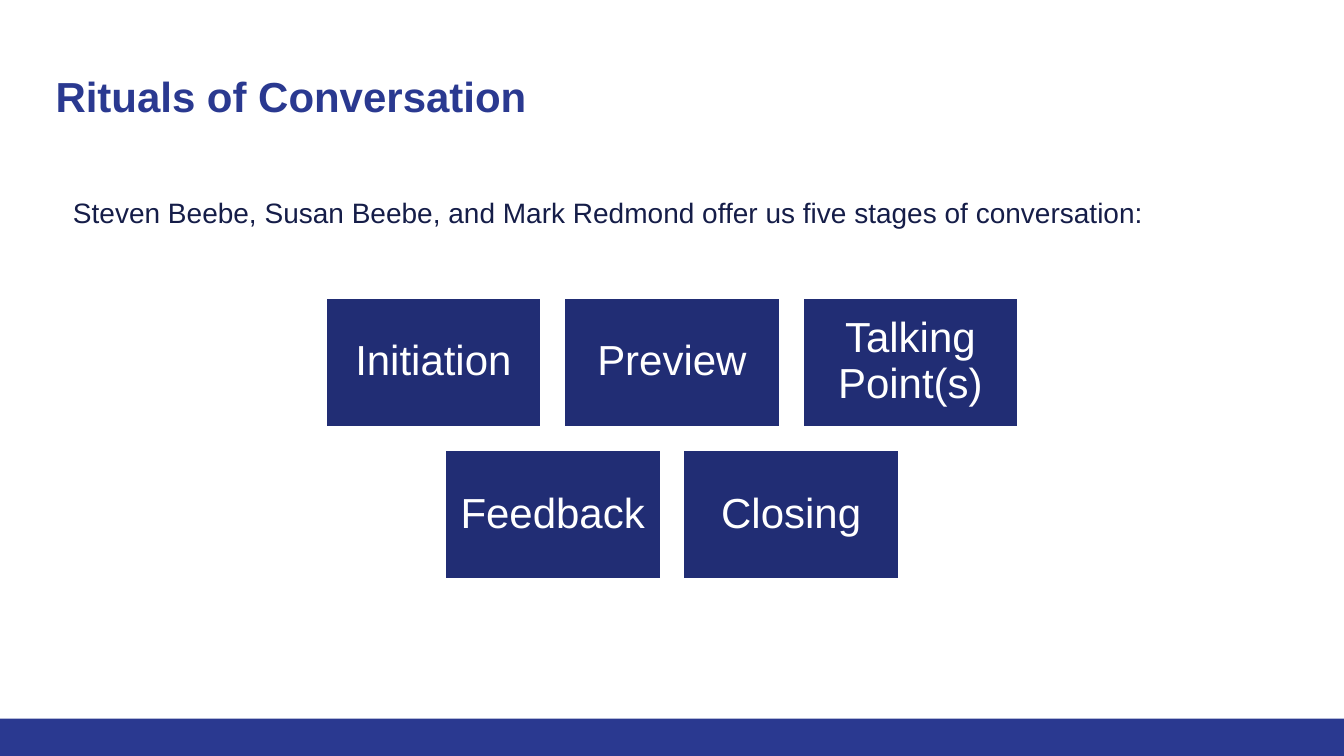
"""Build the slide on the five stages of conversation."""
from dataclasses import dataclass

import pptx
import pptx.dml.color
import pptx.enum.shapes
import pptx.enum.text
import pptx.util

Cm = pptx.util.Cm
Pt = pptx.util.Pt
RGB = pptx.dml.color.RGBColor.from_string
Align = pptx.enum.text.PP_ALIGN
Anchor = pptx.enum.text.MSO_ANCHOR


@dataclass(frozen=True)
class Theme:
    """Colours, font and type sizes of the slide."""
    font: str = "Arial"
    brand: str = "2A3990"
    stage: str = "212D74"
    ink: str = "151D48"
    white: str = "FFFFFF"
    heading_size: int = 30
    body_size: int = 20


THEME = Theme()
SLIDE_WIDTH, SLIDE_HEIGHT = 33.87, 19.05
STAGE_WIDTH, STAGE_HEIGHT = 5.46, 3.27
STAGE_STEP, ROW_STEP = 6.01, 3.84
STAGES_TOP = 7.49
STAGE_ROWS = [["Initiation", "Preview", "Talking Point(s)"], ["Feedback", "Closing"]]


def apply(target, formats):
    """Set every attribute in formats on target."""
    for attribute, value in formats.items():
        setattr(target, attribute, value)


def inset(margin):
    """Return equal frame margins with wrapping on."""
    sides = ("left", "top", "right", "bottom")
    return {"word_wrap": True} | {f"margin_{side}": Cm(margin) for side in sides}


def write(shape, words, colour, frame, paragraph, font):
    """Put formatted words into a shape."""
    apply(shape.text_frame, frame)
    line = shape.text_frame.paragraphs[0]
    line.text = words
    apply(line, paragraph)
    apply(line.runs[0].font, {"name": THEME.font} | font)
    line.runs[0].font.color.rgb = RGB(colour)


def add_text(slide, words, box, colour, frame, paragraph, font):
    """Add a left-aligned text box."""
    text = slide.shapes.add_textbox(*map(Cm, box))
    write(text, words, colour, frame, paragraph, font)


def add_block(slide, box, fill):
    """Add a plain filled rectangle."""
    block = slide.shapes.add_shape(pptx.enum.shapes.MSO_SHAPE.RECTANGLE, *map(Cm, box))
    block.shadow.inherit = False
    block.fill.solid()
    block.fill.fore_color.rgb = RGB(fill)
    block.line.fill.background()
    return block


def add_stage(slide, name, left, top):
    """Add one stage of conversation."""
    stage = add_block(slide, (left, top, STAGE_WIDTH, STAGE_HEIGHT), THEME.stage)
    stage.line.color.rgb = RGB(THEME.white)
    stage.line.width = Pt(2)
    write(stage, name, THEME.white,
          inset(0.3) | {"vertical_anchor": Anchor.MIDDLE},
          {"alignment": Align.CENTER, "line_spacing": 0.9},
          {"size": Pt(THEME.heading_size)})


def add_stages(slide):
    """Add the rows of stages, each centred on the slide."""
    for row, names in enumerate(STAGE_ROWS):
        row_width = (len(names) - 1) * STAGE_STEP + STAGE_WIDTH
        left = (SLIDE_WIDTH - row_width) / 2
        for column, name in enumerate(names):
            add_stage(slide, name, left + column * STAGE_STEP, STAGES_TOP + row * ROW_STEP)


def main():
    """Build and save the slide."""
    deck = pptx.Presentation()
    apply(deck, {"slide_width": Cm(SLIDE_WIDTH), "slide_height": Cm(SLIDE_HEIGHT)})
    slide = deck.slides.add_slide(deck.slide_layouts[6])
    add_block(slide, (0, 18.11, SLIDE_WIDTH, 0.94), THEME.brand)
    add_text(slide, "Rituals of Conversation", (1.15, 1.52, 31.55, 2.26), THEME.brand,
             inset(0.25), {}, {"size": Pt(THEME.heading_size), "bold": True})
    add_text(slide,
             "Steven Beebe, Susan Beebe, and Mark Redmond offer us five stages of conversation:",
             (1.15, 4.55, 31.55, 1.8), THEME.ink,
             inset(0.25) | {"margin_left": Cm(0.69)},
             {"line_spacing": 1.15}, {"size": Pt(THEME.body_size)})
    add_stages(slide)
    deck.save("out.pptx")


if __name__ == "__main__":
    main()
